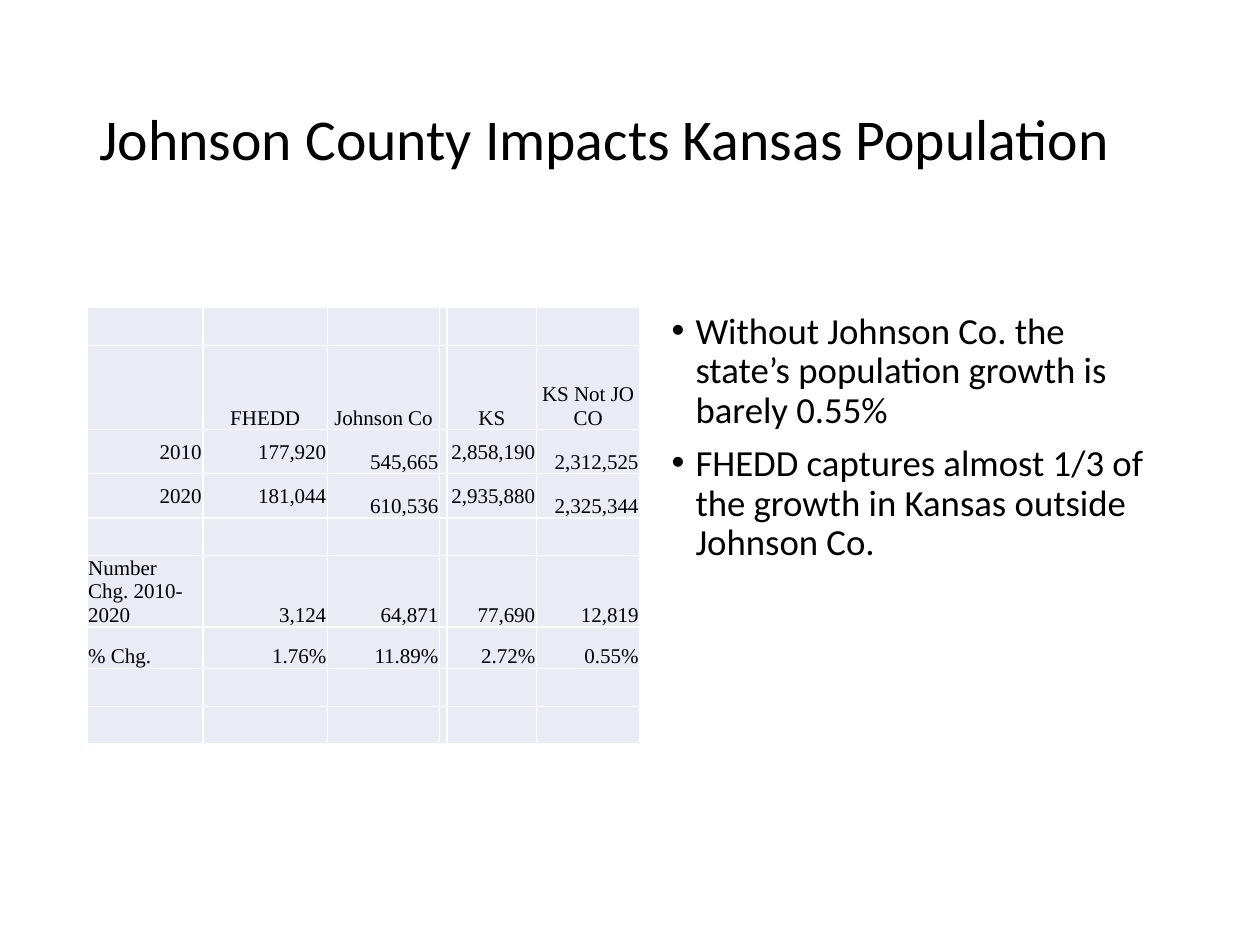
from dataclasses import dataclass

from lxml.etree import SubElement
from pptx import Presentation
from pptx.dml.color import RGBColor
from pptx.enum.text import MSO_ANCHOR as Anchor, MSO_AUTO_SIZE as AutoSize, PP_ALIGN as Align
from pptx.oxml.ns import qn
from pptx.util import Inches, Pt

WIDTH, HEIGHT = Inches(10), Inches(7.5)
BLACK, WHITE, CELL_FILL = "000000", "FFFFFF", "E9EBF5"
COLUMN_WIDTHS = (0.92, 0.99, 0.89, 0.04, 0.71, 0.82)
BORDER_SIDES = ("L", "R", "T", "B")
BULLETS = (
    "Without Johnson Co. the state’s population growth is barely 0.55%",
    "FHEDD captures almost 1/3 of the growth in Kansas outside Johnson Co.",
)
MIDDLE, BOTTOM, TOP = Anchor.MIDDLE, Anchor.BOTTOM, Anchor.TOP
YEAR_ANCHORS = (MIDDLE, MIDDLE, BOTTOM, BOTTOM, MIDDLE, BOTTOM)
ALL_BOTTOM = (BOTTOM,) * len(COLUMN_WIDTHS)


@dataclass
class Row:
    height: float
    texts: tuple = ("",) * len(COLUMN_WIDTHS)
    anchors: tuple = ALL_BOTTOM
    label_align: Align = Align.LEFT
    value_align: Align = Align.RIGHT


BLANK = Row(0.3)
ROWS = (
    BLANK,
    Row(0.67, ("", "FHEDD", "Johnson Co", "", "KS", "KS Not JO CO"), value_align=Align.CENTER),
    Row(0.35, ("2010", "177,920", "545,665", "", "2,858,190", "2,312,525"),
        YEAR_ANCHORS, Align.RIGHT),
    Row(0.35, ("2020", "181,044", "610,536", "", "2,935,880", "2,325,344"),
        YEAR_ANCHORS, Align.RIGHT),
    BLANK,
    Row(0.41, ("Number Chg. 2010-2020", "3,124", "64,871", "", "77,690", "12,819"),
        (TOP,) + ALL_BOTTOM[1:]),
    Row(0.33, ("% Chg.", "1.76%", "11.89%", "", "2.72%", "0.55%")),
    BLANK,
    BLANK,
)


def color(value: str) -> RGBColor:
    return RGBColor.from_string(value)


def apply(target, values: dict) -> None:
    for name, value in values.items():
        setattr(target, name, value)


def set_font(font, name: str, size: float) -> None:
    apply(font, {"name": name, "size": Pt(size)})
    font.color.rgb = color(BLACK)


def place(shape, left: float, top: float, width: float, height: float) -> None:
    """Position a shape by shares of the slide's size."""
    apply(shape, {"left": int(WIDTH * left), "top": int(HEIGHT * top),
                  "width": int(WIDTH * width), "height": int(HEIGHT * height)})


def add_borders(cell) -> None:
    properties = cell._tc.get_or_add_tcPr()
    for side in BORDER_SIDES:
        line = SubElement(properties, qn(f"a:ln{side}"), w=str(Pt(1)))
        SubElement(SubElement(line, qn("a:solidFill")), qn("a:srgbClr"), val=WHITE)


def fill_cell(cell, text: str, anchor: Anchor, align: Align) -> None:
    add_borders(cell)
    cell.fill.solid()
    cell.fill.fore_color.rgb = color(CELL_FILL)
    apply(cell, {"margin_left": Inches(0.01), "margin_right": Inches(0.01),
                 "margin_top": Inches(0.01), "margin_bottom": 0,
                 "vertical_anchor": anchor})
    paragraph = cell.text_frame.paragraphs[0]
    paragraph.alignment = align
    if text:
        run = paragraph.add_run()
        run.text = text
        set_font(run.font, "Times New Roman", 12)
    else:
        SubElement(paragraph._p, qn("a:endParaRPr"), sz="1200")


def add_population_table(slide) -> None:
    frame = slide.shapes.add_table(
        len(ROWS), len(COLUMN_WIDTHS), Inches(0.69), Inches(2.44),
        Inches(sum(COLUMN_WIDTHS)), Inches(sum(row.height for row in ROWS)))
    table = frame.table
    for column, width in zip(table.columns, COLUMN_WIDTHS):
        column.width = Inches(width)
    for row_index, row in enumerate(ROWS):
        table.rows[row_index].height = Inches(row.height)
        for column_index, (text, anchor) in enumerate(zip(row.texts, row.anchors)):
            align = row.value_align if column_index else row.label_align
            fill_cell(table.cell(row_index, column_index), text, anchor, align)


def write_title(shape) -> None:
    place(shape, 0.069, 0.053, 0.862, 0.193)
    frame = shape.text_frame
    apply(frame, {"text": "Johnson County Impacts Kansas Population",
                  "vertical_anchor": MIDDLE, "auto_size": AutoSize.NONE})
    paragraph = frame.paragraphs[0]
    apply(paragraph, {"alignment": Align.LEFT, "line_spacing": 0.9})
    set_font(paragraph.runs[0].font, "Calibri", 33)


def write_bullets(shape) -> None:
    place(shape, 0.523, 0.324, 0.409, 0.476)
    frame = shape.text_frame
    apply(frame, {"text": "\n".join(BULLETS), "auto_size": AutoSize.NONE})
    for index, paragraph in enumerate(frame.paragraphs):
        apply(paragraph, {"line_spacing": 0.9, "space_before": Pt(7.5 if index else 0)})
        properties = paragraph._p.get_or_add_pPr()
        properties.set("marL", str(Inches(0.19)))
        properties.set("indent", str(-Inches(0.19)))
        SubElement(properties, qn("a:buFont"), typeface="Arial")
        SubElement(properties, qn("a:buChar"), char="•")
        set_font(paragraph.runs[0].font, "Calibri", 21)


def main() -> None:
    presentation = Presentation()
    apply(presentation, {"slide_width": WIDTH, "slide_height": HEIGHT})
    slide = presentation.slides.add_slide(presentation.slide_layouts[1])
    write_title(slide.shapes.title)
    add_population_table(slide)
    write_bullets(slide.placeholders[1])
    presentation.save("out.pptx")


if __name__ == "__main__":
    main()
